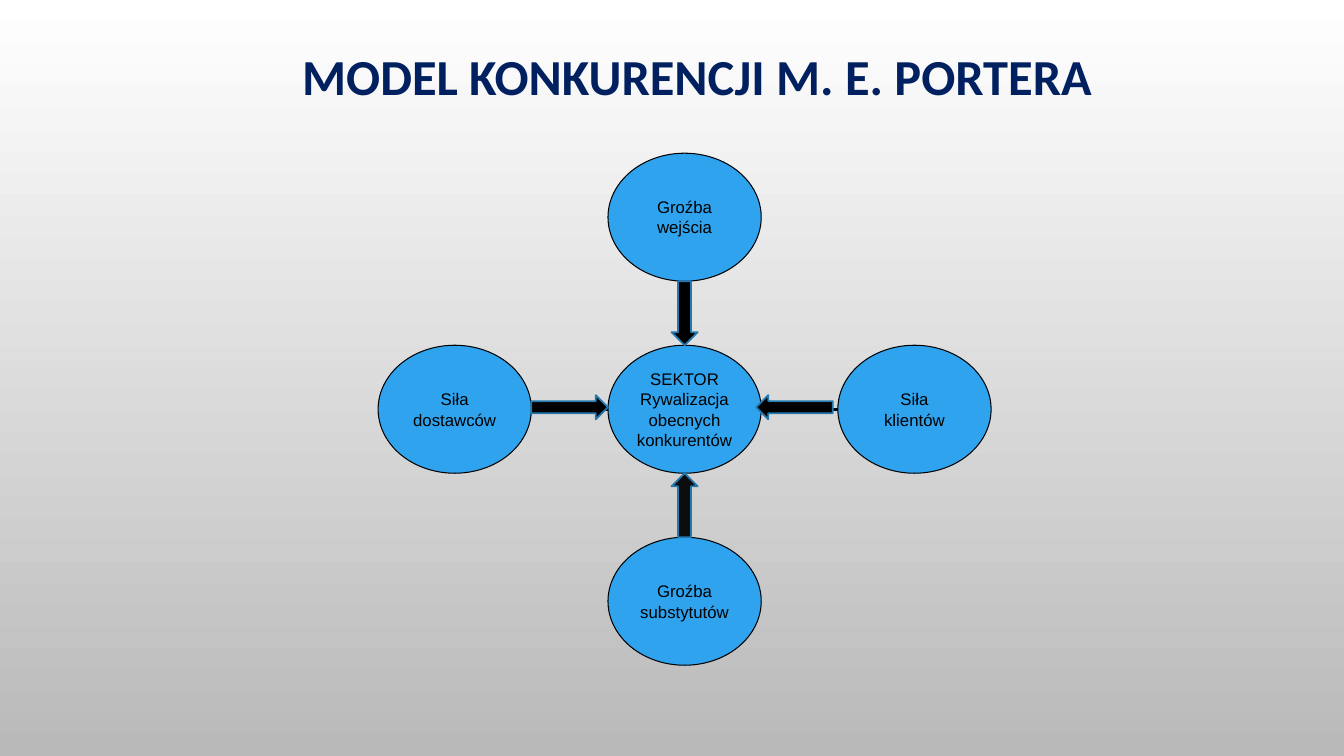
import dataclasses

import pptx
import pptx.dml.color
import pptx.enum.shapes
import pptx.enum.text
import pptx.oxml
import pptx.oxml.ns
import pptx.shapes.autoshape
import pptx.slide
import pptx.text.text
import pptx.util

RGBColor = pptx.dml.color.RGBColor
Shape = pptx.enum.shapes.MSO_SHAPE

WHITE = RGBColor(0xFF, 0xFF, 0xFF)
GREY = RGBColor(0xB9, 0xB9, 0xB9)
NAVY = RGBColor(0x00, 0x20, 0x60)
BLUE = RGBColor(0x2F, 0xA3, 0xEE)
ARROW_EDGE = RGBColor(0x23, 0x79, 0xB0)
BLACK = RGBColor(0x00, 0x00, 0x00)
SOFT_BLACK = RGBColor(0x0D, 0x0D, 0x0D)

# Each circle spans two columns and two rows; one of each separates neighbours
COLUMN, ROW = 1.52 / 2, 1.27 / 2
CENTRE_X, CENTRE_Y = 6.79, 4.06

TITLE_FONT = {"name": "Calibri", "size": pptx.util.Pt(36), "bold": True}
LABEL_FONT = {"name": "Arial", "size": pptx.util.Pt(12), "bold": False}
LABEL_FRAME = {
    "margin_left": 0, "margin_right": 0, "margin_top": 0, "margin_bottom": 0,
    "word_wrap": False, "vertical_anchor": pptx.enum.text.MSO_ANCHOR.MIDDLE,
}


@dataclasses.dataclass(frozen=True)
class Force:
    label: str
    across: int  # direction from the sector, -1 is left
    down: int  # direction from the sector, -1 is up
    arrow: Shape
    arrow_fill: RGBColor = BLACK
    nudge_x: float = 0
    nudge_y: float = 0


FORCES = [
    Force("Siła\ndostawców", -1, 0, Shape.RIGHT_ARROW, nudge_y=-0.02),
    Force("Groźba\nsubstytutów", 0, 1, Shape.UP_ARROW, SOFT_BLACK),
    Force("Siła\nklientów", 1, 0, Shape.LEFT_ARROW, nudge_x=-0.05, nudge_y=-0.02),
    Force("Groźba\nwejścia", 0, -1, Shape.DOWN_ARROW),
]
SECTOR = "SEKTOR\nRywalizacja\nobecnych\nkonkurentów"


def apply(target: object, values: dict[str, object]) -> None:
    for name, value in values.items():
        setattr(target, name, value)


def grid_point(columns: float, rows: float) -> tuple[float, float]:
    """Position in inches, counted from the centre of the sector."""
    return CENTRE_X + columns * COLUMN, CENTRE_Y + rows * ROW


def style_text(frame: pptx.text.text.TextFrame, font: dict[str, object],
               colour: RGBColor, line_spacing: float) -> None:
    for paragraph in frame.paragraphs:
        apply(paragraph, {"alignment": pptx.enum.text.PP_ALIGN.CENTER,
                          "line_spacing": line_spacing})
        apply(paragraph.font, font)
        paragraph.font.color.rgb = colour


def add_centred(slide: pptx.slide.Slide, kind: Shape, centre: tuple[float, float],
                width: float, height: float, fill: RGBColor, edge: RGBColor,
                edge_width: float) -> pptx.shapes.autoshape.Shape:
    x, y = centre
    box = (x - width / 2, y - height / 2, width, height)
    figure = slide.shapes.add_shape(kind, *map(pptx.util.Inches, box))
    figure.shadow.inherit = False
    figure.fill.solid()
    figure.fill.fore_color.rgb = fill
    figure.line.color.rgb = edge
    figure.line.width = pptx.util.Pt(edge_width)
    return figure


def add_circle(slide: pptx.slide.Slide, label: str, columns: float, rows: float) -> None:
    circle = add_centred(slide, Shape.OVAL, grid_point(columns, rows),
                         2 * COLUMN, 2 * ROW, BLUE, BLACK, 0.75)
    circle.text_frame.text = label
    apply(circle.text_frame, LABEL_FRAME)
    style_text(circle.text_frame, LABEL_FONT, BLACK, 1.0)


def add_link(slide: pptx.slide.Slide, force: Force) -> None:
    start = grid_point(force.across, force.down)
    end = grid_point(2 * force.across, 2 * force.down)
    link = slide.shapes.add_connector(pptx.enum.shapes.MSO_CONNECTOR.STRAIGHT,
                                      *map(pptx.util.Inches, start + end))
    link.line.color.rgb = BLACK
    link.line.width = pptx.util.Pt(2.25)
    properties = link._element.spPr
    properties.append(pptx.oxml.parse_xml(
        f"<a:effectLst {pptx.oxml.ns.nsdecls('a')}/>"))


def add_arrow(slide: pptx.slide.Slide, force: Force) -> None:
    x, y = grid_point(1.5 * force.across, 1.5 * force.down)
    width, height = (COLUMN, 0.24) if force.across else (0.26, ROW)
    add_centred(slide, force.arrow, (x + force.nudge_x, y + force.nudge_y),
                width, height, force.arrow_fill, ARROW_EDGE, 1.25)


def main() -> None:
    deck = pptx.Presentation()
    deck.slide_width = pptx.util.Inches(13.33)
    deck.slide_height = pptx.util.Inches(7.5)
    slide = deck.slides.add_slide(deck.slide_layouts.get_by_name("Title Only"))

    # Background, white at the top to grey at the bottom
    backdrop = slide.background.fill
    backdrop.gradient()
    backdrop.gradient_angle = 270
    for stop, colour, position in zip(backdrop.gradient_stops, (WHITE, GREY), (0, 1)):
        stop.color.rgb = colour
        stop.position = position

    # Title
    title = slide.shapes.title
    apply(title, {"left": pptx.util.Inches(1.25), "top": pptx.util.Inches(0.37),
                  "width": pptx.util.Inches(11.33), "height": pptx.util.Inches(0.84)})
    title.text_frame.text = "MODEL KONKURENCJI M. E. PORTERA"
    apply(title.text_frame, {"vertical_anchor": pptx.enum.text.MSO_ANCHOR.MIDDLE,
                             "auto_size": pptx.enum.text.MSO_AUTO_SIZE.NONE})
    style_text(title.text_frame, TITLE_FONT, NAVY, 0.9)

    # Four forces around the sector
    for force in FORCES:
        add_link(slide, force)
        add_circle(slide, force.label, 3 * force.across, 3 * force.down)
    add_circle(slide, SECTOR, 0, 0)

    # Arrows towards the sector
    for force in FORCES:
        add_arrow(slide, force)

    deck.save("out.pptx")


if __name__ == "__main__":
    main()
